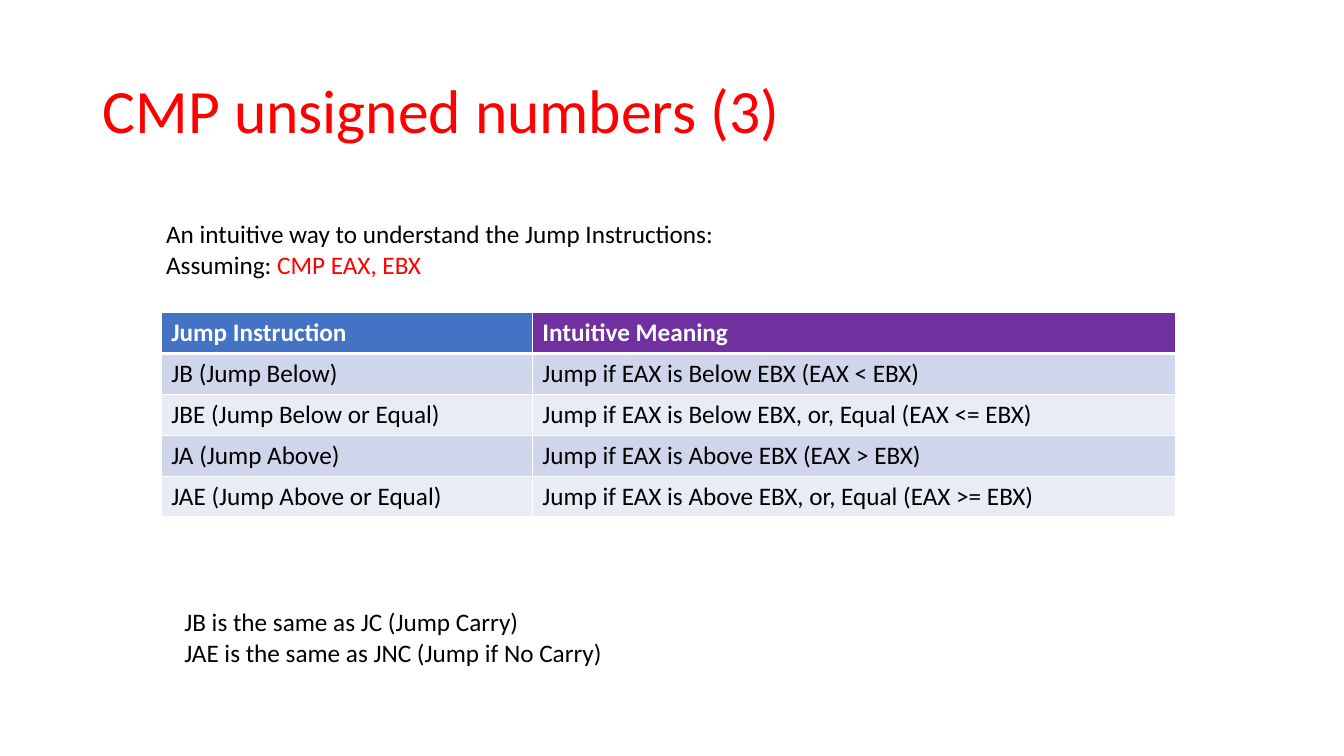
from lxml import etree
from pptx import Presentation
from pptx.dml.color import RGBColor
from pptx.enum.text import MSO_ANCHOR, PP_ALIGN
from pptx.oxml.ns import qn
from pptx.util import Inches, Pt

MIDDLE = MSO_ANCHOR.MIDDLE
LEFT = PP_ALIGN.LEFT

COLORS = {
    "red": "FF0000",
    "black": "000000",
    "white": "FFFFFF",
    "blue": "4472C4",
    "purple": "7030A0",
    "dark": "CFD5EA",
    "light": "E9EBF5",
}
JUMPS = [
    ("Jump Instruction", "Intuitive Meaning"),
    ("JB (Jump Below)", "Jump if EAX is Below EBX (EAX < EBX)"),
    ("JBE (Jump Below or Equal)",
     "Jump if EAX is Below EBX, or, Equal (EAX <= EBX)"),
    ("JA (Jump Above)", "Jump if EAX is Above EBX (EAX > EBX)"),
    ("JAE (Jump Above or Equal)",
     "Jump if EAX is Above EBX, or, Equal (EAX >= EBX)"),
]


class Deck:
    """Holds the text style and the current slide."""

    def __init__(self, slide, font="Calibri", size=18):
        self.slide = slide
        self.font = font
        self.size = size

    def run(self, para, text, color="black", size=None, bold=False):
        run = para.add_run()
        run.text = text
        run.font.name = self.font
        run.font.size = Pt(size or self.size)
        run.font.bold = bold
        run.font.color.rgb = RGBColor.from_string(COLORS[color])

    def title(self, text, box):
        head = self.slide.shapes.title
        head.left, head.top, head.width, head.height = map(Inches, box)
        frame = head.text_frame
        frame.word_wrap = True
        frame.vertical_anchor = MIDDLE
        para = frame.paragraphs[0]
        para.alignment = LEFT
        para.line_spacing = 0.9
        self.run(para, text, "red", 44)

    def note(self, lines, box):
        """Each line is a list of (text, color) runs."""
        frame = self.slide.shapes.add_textbox(*map(Inches, box)).text_frame
        frame.word_wrap = False
        for i, line in enumerate(lines):
            para = frame.add_paragraph() if i else frame.paragraphs[0]
            for text, color in line:
                self.run(para, text, color)

    def border(self, cell, side, width):
        props = cell._tc.get_or_add_tcPr()
        line = etree.SubElement(props, qn("a:" + side), w=str(Pt(width)))
        fill = etree.SubElement(line, qn("a:solidFill"))
        etree.SubElement(fill, qn("a:srgbClr"), val=COLORS["white"])

    def table(self, rows, left, top, widths, height):
        grid = self.slide.shapes.add_table(
            len(rows), len(widths), Inches(left), Inches(top),
            Inches(sum(widths)), Inches(height * len(rows))).table
        for col, width in zip(grid.columns, widths):
            col.width = Inches(width)
        for r, row in enumerate(rows):
            grid.rows[r].height = Inches(height)
            fills = ("blue", "purple") if r == 0 else (
                ("dark",) * 2 if r % 2 else ("light",) * 2)
            for c, text in enumerate(row):
                cell = grid.cell(r, c)
                # Borders come before the fill in the cell properties
                for side in ("lnL", "lnR", "lnT", "lnB"):
                    thick = (r, side) in ((0, "lnB"), (1, "lnT"))
                    self.border(cell, side, 3 if thick else 1)
                cell.fill.solid()
                cell.fill.fore_color.rgb = RGBColor.from_string(
                    COLORS[fills[c]])
                self.run(cell.text_frame.paragraphs[0], text,
                         "black" if r else "white", bold=r == 0)


def main():
    show = Presentation()
    show.slide_width = Inches(13.33)
    show.slide_height = Inches(7.5)
    deck = Deck(show.slides.add_slide(show.slide_layouts[5]))

    # Title
    deck.title("CMP unsigned numbers (3)", (0.92, 0.4, 11.5, 1.45))

    # Introduction
    deck.note([
        [("An intuitive way to understand the Jump Instructions:", "black")],
        [("Assuming: ", "black"), ("CMP EAX, EBX", "red")],
    ], (1.55, 2.12, 5.9, 0.71))

    # Jump table
    deck.table(JUMPS, 1.6, 3.1, (3.68, 6.38), 0.406)

    # Synonyms
    deck.note([
        [("JB is the same as JC (Jump Carry)", "black")],
        [("JAE is the same as JNC (Jump if No Carry)", "black")],
    ], (1.73, 5.97, 4.39, 0.71))

    show.save("out.pptx")


if __name__ == "__main__":
    main()
